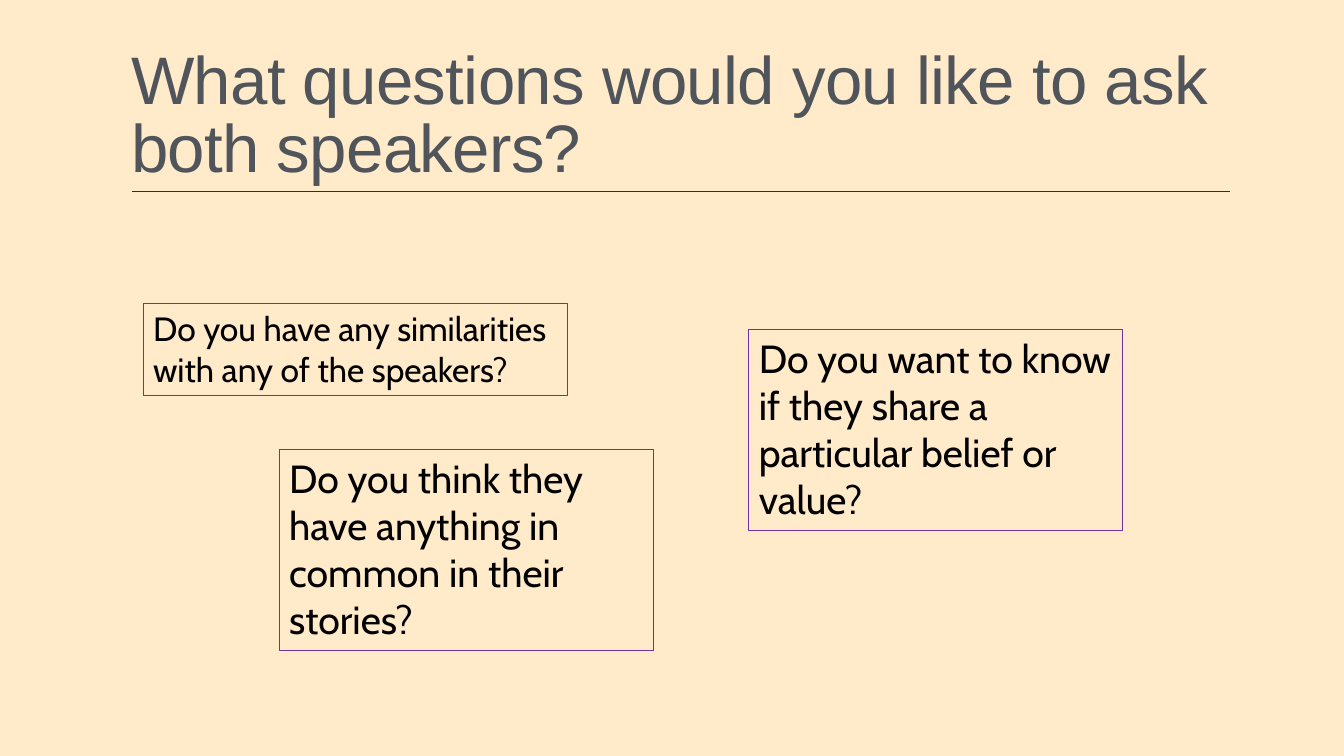
from dataclasses import dataclass

from lxml import etree
from pptx import Presentation
from pptx import util as u
from pptx.dml.color import RGBColor
from pptx.enum import shapes, text
from pptx.oxml.ns import qn


@dataclass(frozen=True)
class Theme:
    """Colours, fonts and type sizes of the slide."""
    background: str = "FFEACA"
    heading: str = "50555B"
    rule: str = "40243C"
    body: str = "000000"
    border: str = "7030A0"
    heading_font: str = "Arial"
    body_font: str = "Cabin"
    heading_size: float = 48
    large: float = 28
    small: float = 24


THEME = Theme()

QUESTIONS = [
    ("Do you have any similarities with any of the speakers?",
     THEME.small, (102.24, 216.72, 303.12, 65.52)),
    ("Do you want to know if they share a particular belief or value?",
     THEME.large, (534.96, 235.44, 267.12, 143.28)),
    ("Do you think they have anything in common in their stories?",
     THEME.large, (199.44, 321.12, 267.12, 143.28)),
]


def rgb(value):
    """Turn a hex string into a colour."""
    return RGBColor.from_string(value)


def write(sp, words, *, size, font, color, anchor, line_spacing=1.0, tracking=0):
    """Fill a shape with one left-aligned, formatted paragraph."""
    tf = sp.text_frame
    tf.word_wrap = True
    tf.auto_size = text.MSO_AUTO_SIZE.NONE
    tf.vertical_anchor = anchor
    p = tf.paragraphs[0]
    p.alignment = text.PP_ALIGN.LEFT
    p.line_spacing = line_spacing
    r = p.add_run()
    r.text = words
    r.font.size = u.Pt(size)
    r.font.name = font
    r.font.color.rgb = rgb(color)
    if tracking:
        r._r.get_or_add_rPr().set("spc", str(round(tracking * 100)))


def add_heading(s, words, left, top, width, height):
    """Place the title in its box with a rule along the bottom edge."""
    sp = s.shapes.title
    sp.left, sp.top = u.Pt(left), u.Pt(top)
    sp.width, sp.height = u.Pt(width), u.Pt(height)
    write(sp, words, size=THEME.heading_size, font=THEME.heading_font,
          color=THEME.heading, anchor=text.MSO_ANCHOR.BOTTOM,
          line_spacing=0.85, tracking=-0.5)
    y = u.Pt(top + height)
    rule = s.shapes.add_connector(shapes.MSO_CONNECTOR.STRAIGHT,
                                  u.Pt(left + 8), y, u.Pt(left + width), y)
    rule.line.color.rgb = rgb(THEME.rule)
    rule.line.width = u.Pt(1)
    etree.SubElement(rule._element.spPr, qn("a:effectLst"))


def add_question(s, words, size, left, top, width, height):
    """Place one outlined question in its box."""
    sp = s.shapes.add_shape(shapes.MSO_SHAPE.RECTANGLE, u.Pt(left), u.Pt(top),
                            u.Pt(width), u.Pt(height))
    sp.shadow.inherit = False
    sp.fill.background()
    sp.line.color.rgb = rgb(THEME.border)
    sp.line.width = u.Pt(0.75)
    write(sp, words, size=size, font=THEME.body_font, color=THEME.body,
          anchor=text.MSO_ANCHOR.TOP)


def main():
    """Build and save the slide."""
    prs = Presentation()
    prs.slide_width, prs.slide_height = u.Pt(960), u.Pt(540)
    s = prs.slides.add_slide(prs.slide_layouts[5])
    s.background.fill.solid()
    s.background.fill.fore_color.rgb = rgb(THEME.background)
    add_heading(s, "What questions would you like to ask both speakers?",
                86.4, 22.32, 792, 114.48)
    for words, size, box in QUESTIONS:
        add_question(s, words, size, *box)
    prs.save("out.pptx")


if __name__ == "__main__":
    main()
